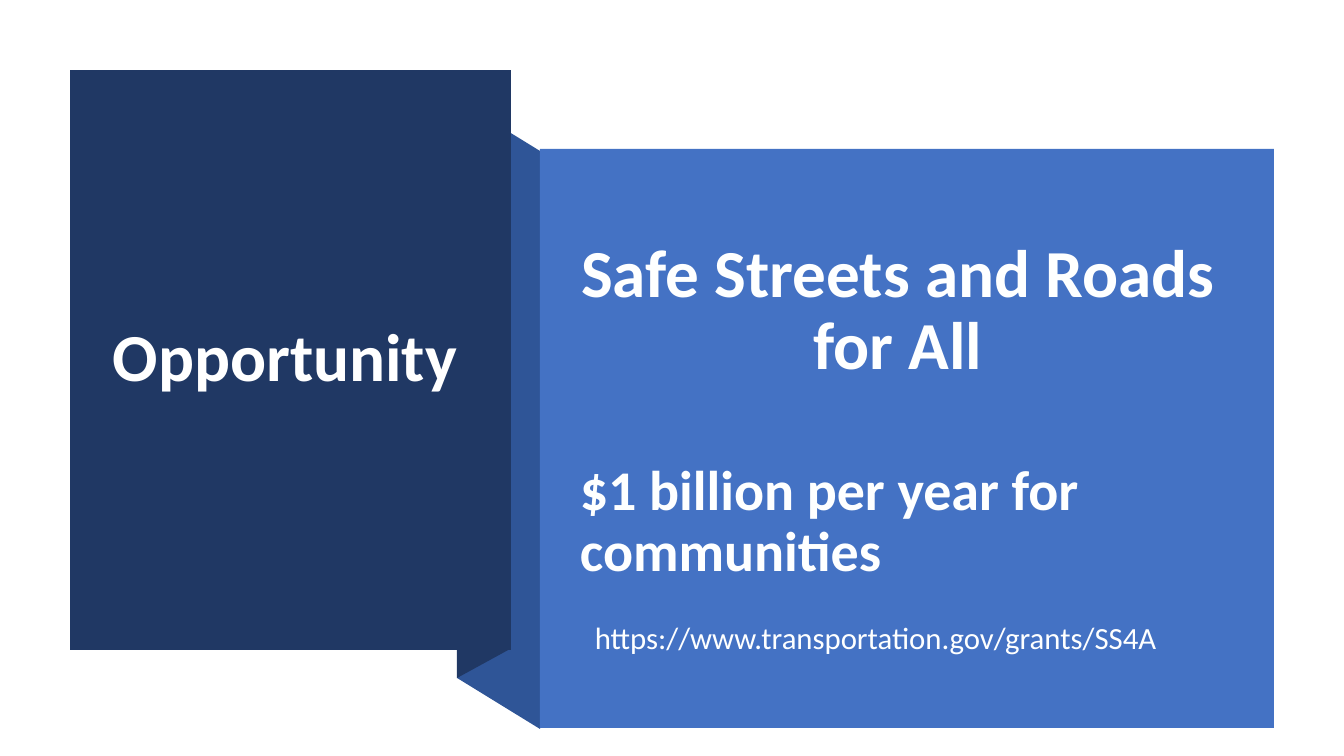
"""Build the Safe Streets and Roads for All opportunity slide."""
import pptx
import pptx.dml.color
import pptx.enum.shapes
import pptx.enum.text
import pptx.util

RGBColor = pptx.dml.color.RGBColor
NAVY = RGBColor(0x20, 0x38, 0x64)
FOLD_BLUE = RGBColor(0x2F, 0x55, 0x97)
PANEL_BLUE = RGBColor(0x44, 0x72, 0xC4)
WHITE = RGBColor(0xFF, 0xFF, 0xFF)
OFF_WHITE = RGBColor(0xFE, 0xFF, 0xFF)
PX = 914400 / 100.8
LEFT = pptx.enum.text.PP_ALIGN.LEFT
CENTER = pptx.enum.text.PP_ALIGN.CENTER


def px(*values):
    return [round(v * PX) for v in values]


def fill_plain(sp, color):
    sp.shadow.inherit = False
    sp.fill.solid()
    sp.fill.fore_color.rgb = color
    sp.line.fill.background()


prs = pptx.Presentation()
prs.slide_width = pptx.util.Inches(13.333)
prs.slide_height = pptx.util.Inches(7.5)
s = prs.slides.add_slide(prs.slide_layouts[6])

outlines = [
    (FOLD_BLUE, [(540, 729), (457, 678), (457, 100), (540, 151)]),
    (NAVY, [(510, 649), (457, 678), (457, 99), (510, 70)]),
    (NAVY, [(70, 70), (511, 70), (511, 650), (70, 650)]),
]
for color, points in outlines:
    builder = s.shapes.build_freeform(*points[0], scale=PX)
    builder.add_line_segments(points[1:], close=True)
    fill_plain(builder.convert_to_shape(), color)

panel = s.shapes.add_shape(pptx.enum.shapes.MSO_SHAPE.RECTANGLE, *px(540, 149, 734, 579))
fill_plain(panel, PANEL_BLUE)

texts = [
    ((103, 108, 374, 503), WHITE, [
        ("Opportunity", 48, True, LEFT, 0, 0, 0),
    ]),
    ((570, 213, 656, 469), OFF_WHITE, [
        ("Safe Streets and Roads for All", 48, True, CENTER, 0, 56, 0),
        ("$1 billion per year for communities", 40, True, LEFT, 0, 6, 0),
        ("https://www.transportation.gov/grants/SS4A", 22, False, LEFT, 22, 6, 15),
    ]),
]
for box, color, paragraphs in texts:
    tf = s.shapes.add_textbox(*px(*box)).text_frame
    tf.word_wrap = True
    tf.vertical_anchor = pptx.enum.text.MSO_ANCHOR.MIDDLE
    for i, (text, size, bold, align, before, after, indent) in enumerate(paragraphs):
        p = tf.add_paragraph() if i else tf.paragraphs[0]
        p.alignment = align
        p.line_spacing = 0.9
        p.space_before = pptx.util.Pt(before)
        p.space_after = pptx.util.Pt(after)
        if indent:
            p._p.get_or_add_pPr().set("marL", str(px(indent)[0]))
        r = p.add_run()
        r.text = text
        r.font.name = "Calibri"
        r.font.size = pptx.util.Pt(size)
        r.font.bold = bold
        r.font.color.rgb = color

prs.save("out.pptx")
